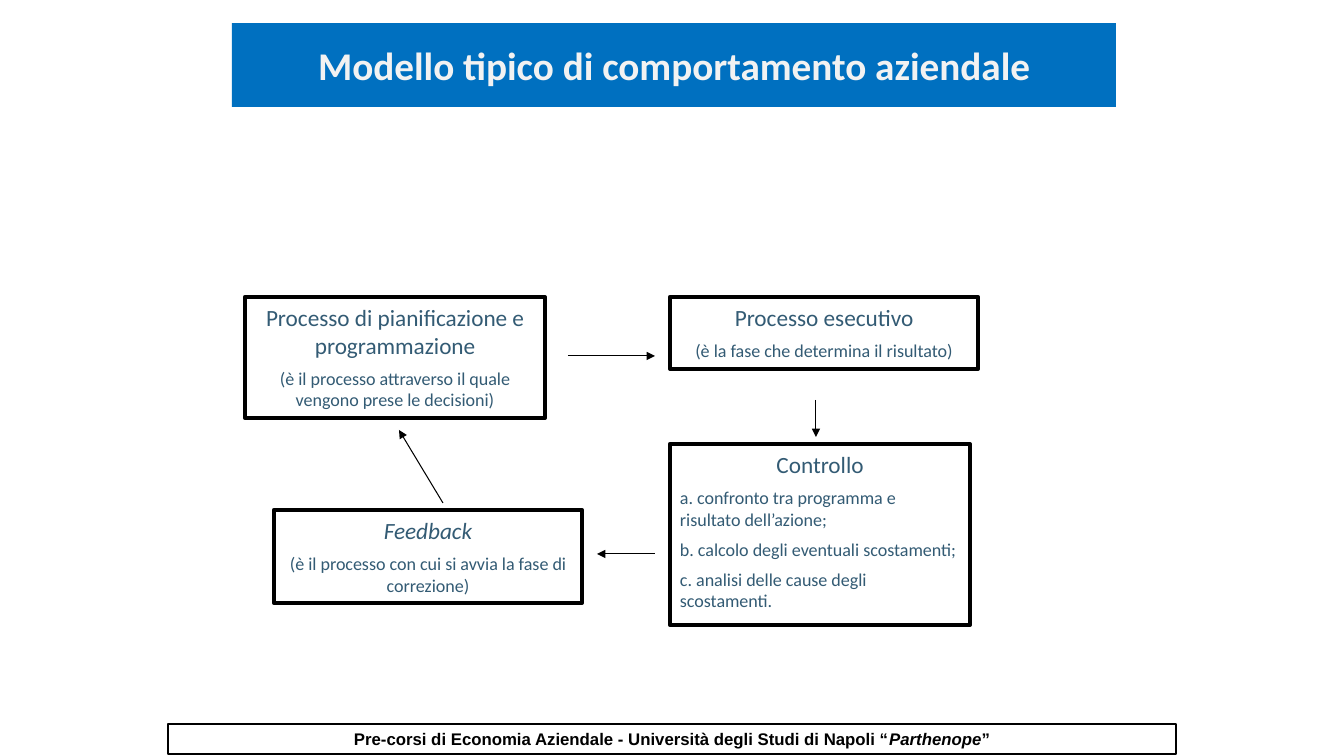
"""Build the slide on the typical model of company behaviour."""
from dataclasses import dataclass

import lxml.etree
import pptx
import pptx.dml.color
import pptx.enum.shapes
import pptx.enum.text
import pptx.oxml.ns
import pptx.util

PX = 914400 / 100.8
HUES = {"blue": "0070C0", "pale": "F2F2F2", "slate": "335B74", "black": "000000"}
ALIGN = pptx.enum.text.PP_ALIGN
ANCHOR = pptx.enum.text.MSO_ANCHOR


@dataclass
class Box:
    """A framed stage: place, heading and notes."""
    left: int
    top: int
    width: int
    height: int
    head: str
    notes: tuple[str, ...]
    align: ALIGN = ALIGN.CENTER
    slant: bool = False


@dataclass
class Arrow:
    """A straight arrow between two points."""
    start: tuple[int, int]
    end: tuple[int, int]


BOXES = [
    Box(245, 297, 300, 121, "Processo di pianificazione e programmazione",
        ("(è il processo attraverso il quale vengono prese le decisioni)",)),
    Box(670, 297, 308, 72, "Processo esecutivo",
        ("(è la fase che determina il risultato)",)),
    Box(670, 444, 300, 181, "Controllo",
        ("a. confronto tra programma e risultato dell’azione;",
         "b. calcolo degli eventuali scostamenti;",
         "c. analisi delle cause degli scostamenti."), align=ALIGN.LEFT),
    Box(274, 510, 308, 93, "Feedback",
        ("(è il processo con cui si avvia la fase di correzione)",), slant=True),
]
ARROWS = [
    Arrow((568, 356), (655, 356)),
    Arrow((816, 400), (816, 437)),
    Arrow((655, 554), (597, 554)),
    Arrow((443, 503), (399, 430)),
]


def emu(px: int) -> int:
    """Turn px into EMU."""
    return round(px * PX)


def hue(name: str) -> pptx.dml.color.RGBColor:
    """Look up a colour."""
    return pptx.dml.color.RGBColor.from_string(HUES[name])


def write(para, text: str, *, size: float, color: str = "slate", font: str = "Calibri",
          bold: bool = False, slant: bool = False, align=ALIGN.CENTER, gap: float = 0) -> None:
    """Add a run of formatted text to a paragraph."""
    para.alignment = align
    para.space_before = pptx.util.Pt(gap)
    run = para.add_run()
    run.text = text
    run.font.name = font
    run.font.size = pptx.util.Pt(size)
    run.font.bold = bold
    run.font.italic = slant
    run.font.color.rgb = hue(color)


def frame(slide, left: int, top: int, width: int, height: int, weight: float, anchor):
    """Draw an outlined rectangle and return its text frame."""
    shape = slide.shapes.add_shape(pptx.enum.shapes.MSO_SHAPE.RECTANGLE,
                                   emu(left), emu(top), emu(width), emu(height))
    shape.shadow.inherit = False
    shape.fill.background()
    shape.line.color.rgb = hue("black")
    shape.line.width = pptx.util.Pt(weight)
    body = shape.text_frame
    body.word_wrap = True
    body.vertical_anchor = anchor
    body.margin_left = body.margin_right = emu(10)
    body.margin_top = body.margin_bottom = emu(6)
    return body


def stage(slide, box: Box) -> None:
    """Draw one stage of the cycle."""
    body = frame(slide, box.left, box.top, box.width, box.height, 3, ANCHOR.TOP)
    write(body.paragraphs[0], box.head, size=16.6, slant=box.slant)
    for note in box.notes:
        write(body.add_paragraph(), note, size=12.9, align=box.align, gap=6)


def link(slide, arrow: Arrow) -> None:
    """Draw one arrow."""
    line = slide.shapes.add_connector(pptx.enum.shapes.MSO_CONNECTOR.STRAIGHT,
                                      *map(emu, arrow.start + arrow.end))
    line.line.color.rgb = hue("black")
    line.line.width = pptx.util.Pt(0.75)
    tail = lxml.etree.SubElement(line.line._get_or_add_ln(), pptx.oxml.ns.qn("a:tailEnd"))
    tail.set("type", "triangle")
    lxml.etree.SubElement(line._element.spPr, pptx.oxml.ns.qn("a:effectLst"))


def banner(slide) -> None:
    """Format the title placeholder."""
    title = slide.shapes.title
    title.left, title.top, title.width, title.height = map(emu, (232, 23, 884, 84))
    title.fill.solid()
    title.fill.fore_color.rgb = hue("blue")
    title.text_frame.word_wrap = True
    title.text_frame.vertical_anchor = ANCHOR.MIDDLE
    write(title.text_frame.paragraphs[0], "Modello tipico di comportamento aziendale",
          size=28, color="pale", bold=True)


def footer(slide) -> None:
    """Draw the course line at the foot."""
    para = frame(slide, 168, 724, 1008, 30, 1.5, ANCHOR.MIDDLE).paragraphs[0]
    for text, slant in (("Pre-corsi di Economia Aziendale - Università degli Studi di Napoli “", False),
                        ("Parthenope", True), ("”", False)):
        write(para, text, size=12, color="black", font="Arial", bold=True, slant=slant)


def main() -> None:
    """Build and save the deck."""
    deck = pptx.Presentation()
    deck.slide_width, deck.slide_height = emu(1344), emu(756)
    slide = deck.slides.add_slide(deck.slide_layouts[5])
    banner(slide)
    for box in BOXES:
        stage(slide, box)
    for arrow in ARROWS:
        link(slide, arrow)
    footer(slide)
    deck.save("out.pptx")


if __name__ == "__main__":
    main()
